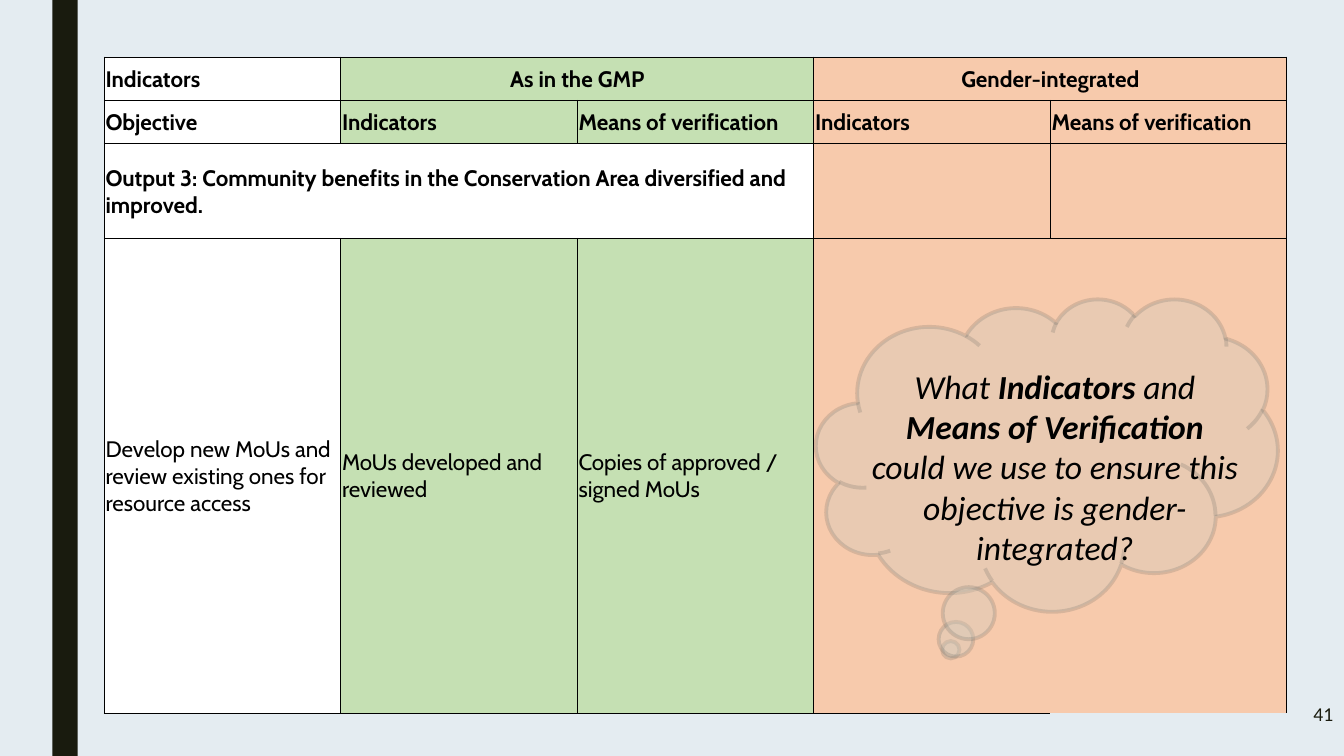
from dataclasses import dataclass

from lxml import etree
from pptx import Presentation
from pptx import util as u
from pptx.dml import color
from pptx.enum import shapes, text
from pptx.oxml import ns

BLACK, DARK, WHITE, GREEN, PEACH = "000000", "191B0E", "FFFFFF", "C5E0B3", "F7CAAC"
COLUMN_FILLS = [WHITE, GREEN, GREEN, PEACH, PEACH]
ROW_HEIGHTS = [1.09, 1.09, 2.39, 4.39, 4.34, 3.23]
COLUMN_WIDTH = 5.96
OPEN_ROW, OPEN_COLUMN = 3, 3


@dataclass
class Entry:
    row: int
    column: int
    wording: str = ""
    rows: int = 1
    columns: int = 1
    bold: bool = True
    centred: bool = False


@dataclass
class Span:
    wording: str
    bold: bool = False


ENTRIES = [
    Entry(0, 0, "Indicators"),
    Entry(0, 1, "As in the GMP", columns=2, centred=True),
    Entry(0, 3, "Gender-integrated", columns=2, centred=True),
    Entry(1, 0, "Objective"),
    Entry(1, 1, "Indicators"),
    Entry(1, 2, "Means of verification"),
    Entry(1, 3, "Indicators"),
    Entry(1, 4, "Means of verification"),
    Entry(2, 0, "Output 3: Community benefits in the Conservation Area diversified and improved.", columns=3),
    Entry(3, 0, "Develop new MoUs and review existing ones for resource access", rows=3, bold=False),
    Entry(3, 1, "MoUs developed and reviewed", rows=3, bold=False),
    Entry(3, 2, "Copies of approved / signed MoUs", rows=3, bold=False),
    Entry(4, 4, rows=2),
]

QUESTION = [
    Span("What "),
    Span("Indicators", True),
    Span(" and "),
    Span("Means of Verification ", True),
    Span("could we use to ensure this objective is gender-integrated?"),
]


def rgb(code: str) -> color.RGBColor:
    return color.RGBColor.from_string(code)


def style(span, size: float, name: str, code: str = BLACK, bold: bool = False, italic: bool = False) -> None:
    span.font.size, span.font.name = u.Pt(size), name
    span.font.bold, span.font.italic = bold, italic
    span.font.color.rgb = rgb(code)


def set_alpha(holder, percent: int) -> None:
    for tint in holder.iter(ns.qn("a:srgbClr")):
        etree.SubElement(tint, ns.qn("a:alpha")).set("val", str(percent * 1000))


def add_border(cell, side: str, visible: bool) -> None:
    edge = etree.SubElement(cell._tc.get_or_add_tcPr(), ns.qn(f"a:ln{side}"))
    edge.set("w", str(u.Pt(1)))
    if visible:
        paint = etree.SubElement(edge, ns.qn("a:solidFill"))
        etree.SubElement(paint, ns.qn("a:srgbClr")).set("val", BLACK)
    else:
        etree.SubElement(edge, ns.qn("a:noFill"))


def format_cell(cell, row: int, column: int) -> None:
    closed = row < OPEN_ROW or column < OPEN_COLUMN
    borders = {
        "L": column == OPEN_COLUMN,
        "R": column == len(COLUMN_FILLS) - 1,
        "T": row == OPEN_ROW,
        "B": row == len(ROW_HEIGHTS) - 1,
    }
    for side, outer in borders.items():
        add_border(cell, side, closed or outer)
    cell.fill.solid()
    cell.fill.fore_color.rgb = rgb(WHITE if row == 2 and column < 3 else COLUMN_FILLS[column])
    cell.vertical_anchor = text.MSO_ANCHOR.MIDDLE
    cell.margin_left = cell.margin_right = cell.margin_top = u.Cm(0.03)
    cell.margin_bottom = 0


def add_indicator_table(page) -> None:
    frame = page.shapes.add_table(
        len(ROW_HEIGHTS), len(COLUMN_FILLS), u.Cm(2.63), u.Cm(1.44),
        u.Cm(COLUMN_WIDTH * len(COLUMN_FILLS)), u.Cm(sum(ROW_HEIGHTS)),
    )
    table = frame.table
    table.first_row = table.horz_banding = False
    for column in table.columns:
        column.width = u.Cm(COLUMN_WIDTH)
    for row_index, height in enumerate(ROW_HEIGHTS):
        table.rows[row_index].height = u.Cm(height)
        for column_index in range(len(COLUMN_FILLS)):
            format_cell(table.cell(row_index, column_index), row_index, column_index)
    for entry in ENTRIES:
        cell = table.cell(entry.row, entry.column)
        if entry.rows * entry.columns > 1:
            cell.merge(table.cell(entry.row + entry.rows - 1, entry.column + entry.columns - 1))
        if entry.wording:
            cell.text_frame.text = entry.wording
            para = cell.text_frame.paragraphs[0]
            para.alignment = text.PP_ALIGN.CENTER if entry.centred else text.PP_ALIGN.LEFT
            style(para.runs[0], 16, "Cabin", bold=entry.bold)


def add_filled_shape(page, kind, left: float, top: float, width: float, height: float, code: str):
    shape = page.shapes.add_shape(kind, u.Cm(left), u.Cm(top), u.Cm(width), u.Cm(height))
    shape.shadow.inherit = False
    shape.fill.solid()
    shape.fill.fore_color.rgb = rgb(code)
    shape.line.fill.background()
    return shape


def add_cloud(page) -> None:
    cloud = add_filled_shape(page, shapes.MSO_SHAPE.CLOUD_CALLOUT, 20.57, 7.52, 11.63, 7.87, "D1CBBE")
    set_alpha(cloud._element.spPr, 36)
    cloud.line.color.rgb = rgb("686863")
    cloud.line.width = u.Pt(2.75)
    set_alpha(cloud.line._get_or_add_ln(), 22)


def add_text_box(page, left: float, top: float, width: float, height: float, alignment):
    box = page.shapes.add_textbox(u.Cm(left), u.Cm(top), u.Cm(width), u.Cm(height))
    box.text_frame.word_wrap = True
    para = box.text_frame.paragraphs[0]
    para.alignment = alignment
    return box, para


def add_question(page) -> None:
    box, para = add_text_box(page, 21.62, 9.09, 9.93, 5.38, text.PP_ALIGN.CENTER)
    box.text_frame.auto_size = text.MSO_AUTO_SIZE.SHAPE_TO_FIT_TEXT
    for part in QUESTION:
        span = para.add_run()
        span.text = part.wording
        style(span, 24, "Calibri", bold=part.bold, italic=True)


def add_page_number(page) -> None:
    box, para = add_text_box(page, 31.34, 16.94, 2.51, 2.11, text.PP_ALIGN.RIGHT)
    box.text_frame.vertical_anchor = text.MSO_ANCHOR.MIDDLE
    para.text = "41"
    style(para.runs[0], 14, "Calibri", DARK)


def main() -> None:
    deck = Presentation()
    deck.slide_width, deck.slide_height = u.Cm(33.87), u.Cm(19.05)
    page = deck.slides.add_slide(deck.slide_layouts[6])
    page.background.fill.solid()
    page.background.fill.fore_color.rgb = rgb("E4ECF1")
    add_filled_shape(page, shapes.MSO_SHAPE.RECTANGLE, 1.32, 0, 0.64, 19.05, DARK)
    add_indicator_table(page)
    add_cloud(page)
    add_question(page)
    add_page_number(page)
    deck.save("out.pptx")


if __name__ == "__main__":
    main()
